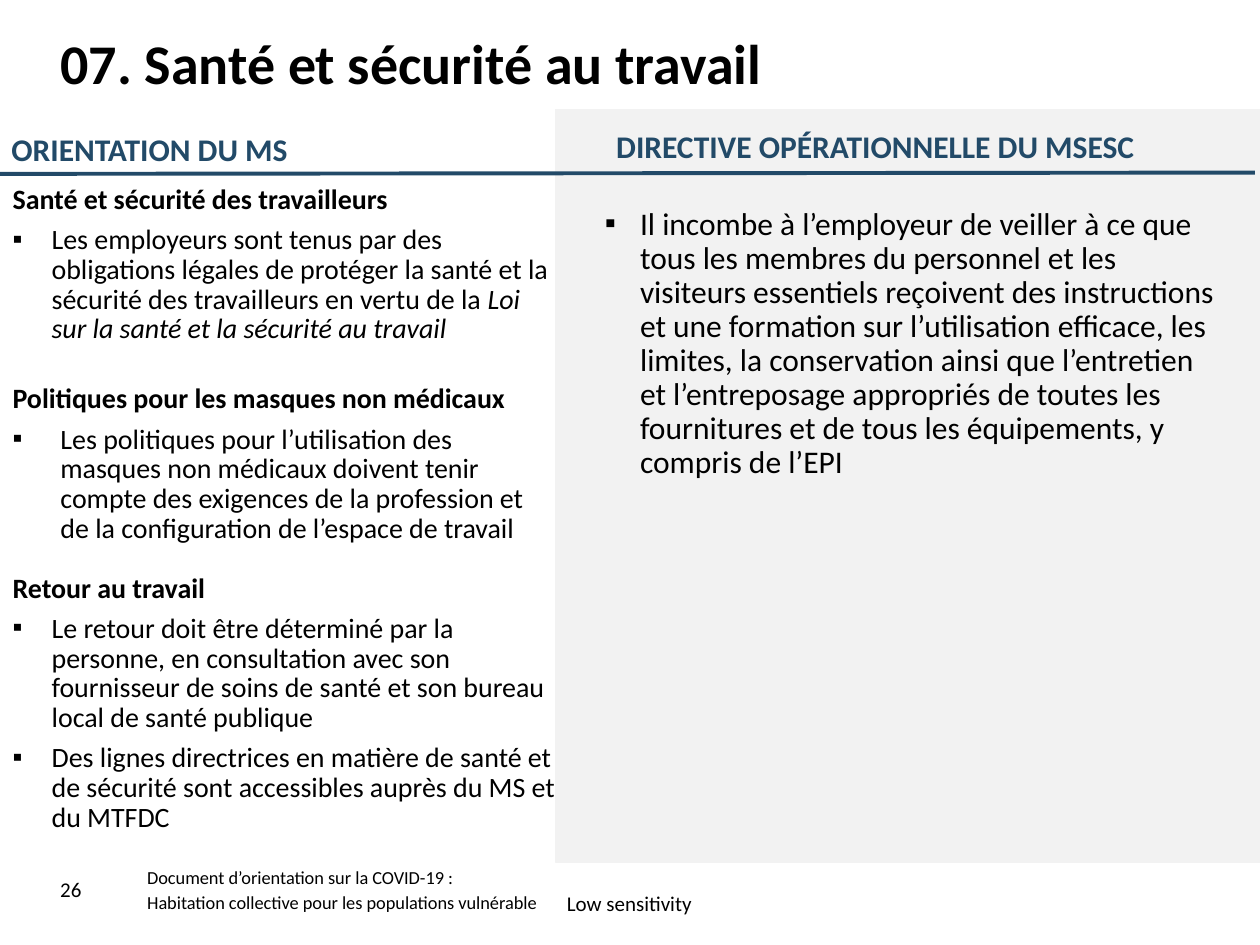
import pptx
import pptx.util
import pptx.dml.color
import pptx.enum.shapes
import pptx.enum.text
import pptx.oxml.ns
from dataclasses import dataclass
from lxml import etree

Inches = pptx.util.Inches
Pt = pptx.util.Pt
Anchor = pptx.enum.text.MSO_ANCHOR
Align = pptx.enum.text.PP_ALIGN


@dataclass(frozen=True)
class Theme:
    font: str = "Calibri"
    ink: str = "000000"
    accent: str = "224A68"
    panel: str = "F2F2F2"
    title: float = 32
    heading: float = 18
    guidance: float = 16
    directive: float = 18
    footer: float = 12
    document: float = 10.5


THEME = Theme()

# Each section: space before, heading, bullet indent, bullets made of (text, italic) runs
GUIDANCE = [
    (0, "Santé et sécurité des travailleurs", 0.31, [
        [("Les employeurs sont tenus par des obligations légales de protéger la santé "
          "et la sécurité des travailleurs en vertu de la ", False),
         ("Loi sur la santé et la sécurité au travail", True)]]),
    (23, "Politiques pour les masques non médicaux", 0.38, [
        [("Les politiques pour l’utilisation des masques non médicaux doivent tenir "
          "compte des exigences de la profession et de la configuration de l’espace "
          "de travail", False)]]),
    (17, "Retour au travail", 0.31, [
        [("Le retour doit être déterminé par la personne, en consultation avec son "
          "fournisseur de soins de santé et son bureau local de santé publique", False)],
        [("Des lignes directrices en matière de santé et de sécurité sont accessibles "
          "auprès du MS et du MTFDC", False)]]),
]
DIRECTIVE = (
    "Il incombe à l’employeur de veiller à ce que tous les membres du personnel et les "
    "visiteurs essentiels reçoivent des instructions et une formation sur l’utilisation "
    "efficace, les limites, la conservation ainsi que l’entretien et l’entreposage "
    "appropriés de toutes les fournitures et de tous les équipements, y compris de l’EPI")


def rgb(value):
    return pptx.dml.color.RGBColor.from_string(value)


def place(shape, box):
    for side, length in zip(("left", "top", "width", "height"), box):
        setattr(shape, side, Inches(length))


def prepare_frame(shape, box, anchor=Anchor.TOP, insets=(0.1, 0.05, 0.1, 0.05)):
    """Place a text shape and return its frame with fixed size and insets."""
    place(shape, box)
    frame = shape.text_frame
    settings = {"word_wrap": True, "auto_size": pptx.enum.text.MSO_AUTO_SIZE.NONE,
                "vertical_anchor": anchor}
    for side, inset in zip(("left", "top", "right", "bottom"), insets):
        settings[f"margin_{side}"] = Inches(inset)
    for name, value in settings.items():
        setattr(frame, name, value)
    return frame


def write(paragraph, runs, size, color=THEME.ink, bold=False, indent=None,
          align=Align.LEFT, spacing=1.0, before=0):
    """Fill a paragraph with (text, italic) runs; an indent gives it a square bullet."""
    layout = {"alignment": align, "line_spacing": spacing, "space_before": Pt(before),
              "space_after": Pt(0)}
    for name, value in layout.items():
        setattr(paragraph, name, value)
    properties = paragraph._p.get_or_add_pPr()
    hang = Inches(indent or 0)
    properties.set("marL", str(hang))
    properties.set("indent", str(-hang))
    qn = pptx.oxml.ns.qn
    if indent:
        etree.SubElement(properties, qn("a:buFont"), typeface="Arial")
        etree.SubElement(properties, qn("a:buChar"), char="▪")
    else:
        etree.SubElement(properties, qn("a:buNone"))
    for text, italic in runs:
        run = paragraph.add_run()
        run.text = text
        look = {"name": THEME.font, "size": Pt(size), "bold": bold, "italic": italic}
        for name, value in look.items():
            setattr(run.font, name, value)
        run.font.color.rgb = rgb(color)


def add_title(slide, box):
    frame = prepare_frame(slide.shapes.title, box)
    write(frame.paragraphs[0], [("07. Santé et sécurité au travail", False)],
          THEME.title, bold=True, spacing=0.9)


def add_heading(placeholder, box, text):
    frame = prepare_frame(placeholder, box)
    write(frame.paragraphs[0], [(text, False)], THEME.heading, THEME.accent, bold=True)


def add_guidance(placeholder, box):
    frame = prepare_frame(placeholder, box, insets=(0.08, 0.05, 0, 0))
    paragraph = frame.paragraphs[0]
    for before, heading, indent, bullets in GUIDANCE:
        if before:
            paragraph = frame.add_paragraph()
        write(paragraph, [(heading, False)], THEME.guidance, bold=True,
              spacing=Pt(17), before=before)
        for runs in bullets:
            write(frame.add_paragraph(), runs, THEME.guidance, indent=indent,
                  spacing=Pt(17), before=6)


def add_directive(placeholder, box):
    frame = prepare_frame(placeholder, box, insets=(0.07, 0.04, 0.07, 0.04))
    write(frame.paragraphs[0], [(DIRECTIVE, False)], THEME.directive, indent=0.28,
          spacing=0.9)


def add_panel(slide, box):
    """Shade the right column behind all text."""
    panel = slide.shapes.add_shape(pptx.enum.shapes.MSO_SHAPE.RECTANGLE,
                                   *map(Inches, box))
    panel.shadow.inherit = False
    panel.fill.solid()
    panel.fill.fore_color.rgb = rgb(THEME.panel)
    panel.line.color.rgb = rgb(THEME.panel)
    panel.line.width = Pt(1)
    slide.shapes._spTree.insert(2, panel._element)


def add_rule(slide, start, end):
    rule = slide.shapes.add_connector(pptx.enum.shapes.MSO_CONNECTOR.STRAIGHT,
                                      *map(Inches, start + end))
    rule.line.color.rgb = rgb(THEME.accent)
    rule.line.width = Pt(2.25)
    etree.SubElement(rule._element.spPr, pptx.oxml.ns.qn("a:effectLst"))


def add_footer(slide, box):
    left, top, _, height = box
    parts = [
        (0, 0, 0.56, ["26"], THEME.footer, Align.LEFT),
        (0.69, 0, 3.67, ["Document d’orientation sur la COVID-19 :",
                         "Habitation collective pour les populations vulnérable"],
         THEME.document, Align.LEFT),
        (3.24, 0.11, 2.75, ["Low sensitivity"], THEME.footer, Align.CENTER),
    ]
    for x, y, width, lines, size, align in parts:
        area = (left + x, top + y, width, height)
        label = slide.shapes.add_textbox(*map(Inches, area))
        frame = prepare_frame(label, area, Anchor.MIDDLE)
        for number, line in enumerate(lines):
            paragraph = frame.add_paragraph() if number else frame.paragraphs[0]
            write(paragraph, [(line, False)], size, align=align,
                  before=1.5 if number else 0)


def main():
    deck = pptx.Presentation()
    deck.slide_width, deck.slide_height = Inches(10), Inches(7.5)
    slide = deck.slides.add_slide(deck.slide_layouts.get_by_name("Comparison"))
    _, left_heading, left_body, right_heading, right_body = slide.placeholders

    add_panel(slide, (4.41, 0.87, 5.63, 5.97))
    add_title(slide, (0.38, 0.24, 6.87, 0.45))
    add_heading(left_heading, (-0.01, 0.98, 4.08, 0.4), "ORIENTATION DU MS")
    add_guidance(left_body, (0.02, 1.42, 4.39, 5.35))
    add_heading(right_heading, (4.79, 0.96, 4.84, 0.4),
                "DIRECTIVE OPÉRATIONNELLE DU MSESC")
    add_directive(right_body, (4.73, 1.61, 5.05, 3.68))
    add_rule(slide, (0, 1.38), (9.96, 1.37))
    add_footer(slide, (0.38, 6.86, 5.99, 0.4))
    deck.save("out.pptx")


if __name__ == "__main__":
    main()
